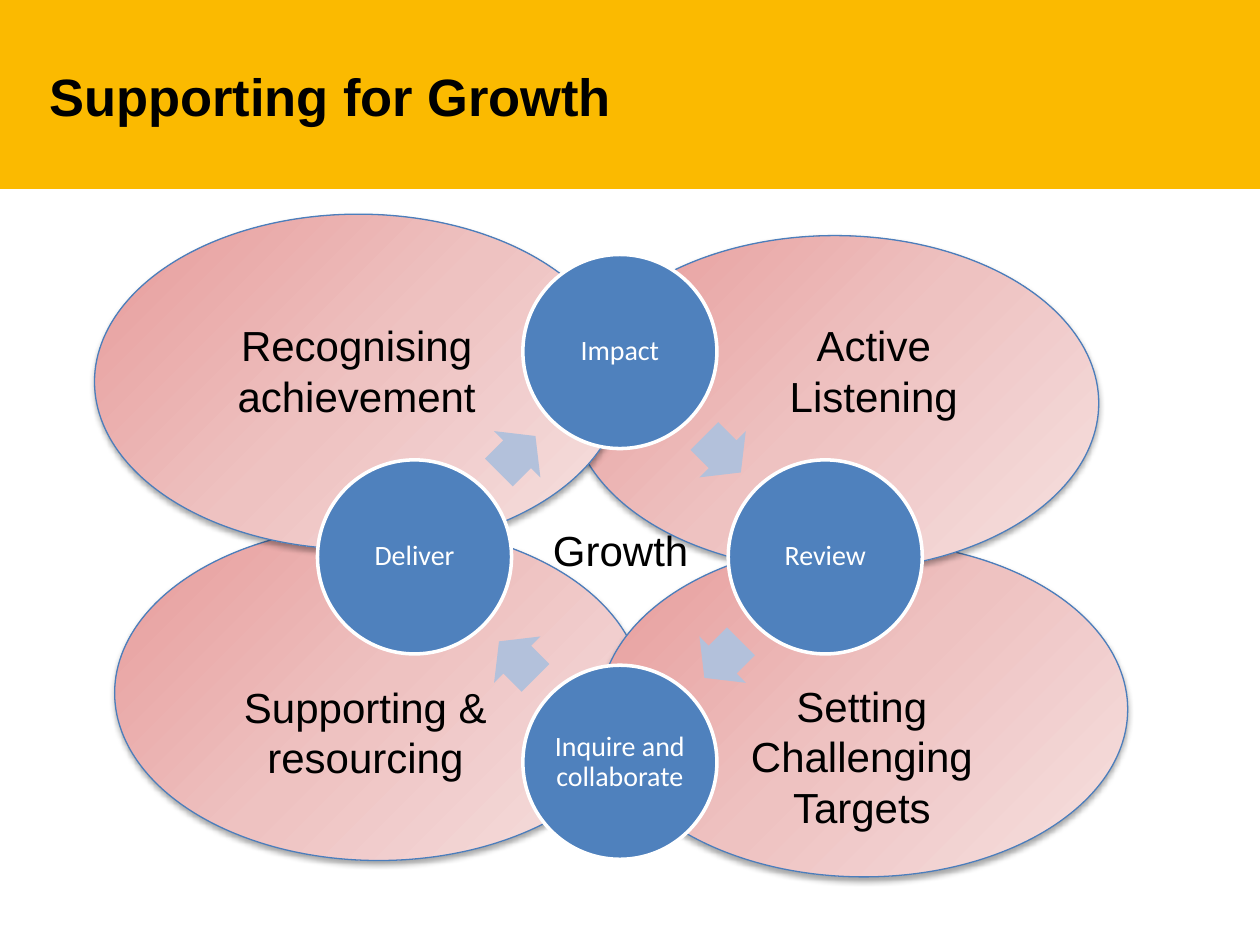
from math import cos, radians, sin

from lxml.etree import SubElement
from pptx import Presentation
from pptx.dml.color import RGBColor
from pptx.enum.shapes import MSO_SHAPE as Shape
from pptx.enum.text import MSO_ANCHOR as Anchor, PP_ALIGN as Align
from pptx.oxml import parse_xml
from pptx.oxml.ns import nsdecls, qn
from pptx.util import Inches, Pt

COLORS = {
    "banner": "FBBA00", "text": "000000", "white": "FFFFFF",
    "stage": "4F81BD", "arrow": "B3C1DB", "petal_line": "4B7EBC",
}
PETAL_STOPS = [(0, "E79A99"), (50, "EEC2C1"), (100, "F6E1E1")]

TITLE = "Supporting for Growth"
CENTRE_LABEL = ("Growth", (4.29, 4.11, 1.29, 0.5))
# Back to front: left and top of the petal, label, box of the label
PETALS = [
    ((0.91, 4.17), "Supporting & resourcing", (1.61, 5.36, 2.58, 0.91)),
    ((4.76, 4.3), "Setting Challenging Targets", (5.55, 5.35, 2.58, 1.31)),
    ((4.53, 1.87), "Active Listening", (5.87, 2.49, 2.13, 0.91)),
    ((0.75, 1.7), "Recognising achievement", (1.54, 2.49, 2.58, 0.91)),
]
STAGES = ["Impact", "Review", "Inquire and collaborate", "Deliver"]  # clockwise from top

WIDTH, HEIGHT = 10, 7.5
PETAL_SIZE = (4.19, 2.66)
CYCLE_CENTRE, CYCLE_RADIUS = (4.92, 4.42), 1.63
STAGE_SIZE, ARROW_SIZE = (1.54, 1.54), (0.41, 0.52)

deck = Presentation()
deck.slide_width, deck.slide_height = Inches(WIDTH), Inches(HEIGHT)
page = deck.slides.add_slide(deck.slide_layouts[6])


def rgb(name):
    return RGBColor.from_string(COLORS[name])


def add_shape(kind, place, fill=None, line=None, line_width=1):
    shape = page.shapes.add_shape(kind, *map(Inches, place))
    shape.shadow.inherit = False
    if fill:
        shape.fill.solid()
        shape.fill.fore_color.rgb = rgb(fill)
    if line:
        shape.line.color.rgb = rgb(line)
        shape.line.width = Pt(line_width)
    else:
        shape.line.fill.background()
    return shape


def write(shape, text, size, font="Arial", color="text", align=Align.CENTER,
          bold=False, inset=None, anchor=Anchor.TOP, wrap=True):
    frame = shape.text_frame
    frame.word_wrap, frame.vertical_anchor = wrap, anchor
    if inset is not None:
        frame.margin_left = frame.margin_right = Inches(inset)
        frame.margin_top = frame.margin_bottom = Inches(inset)
    para = frame.paragraphs[0]
    para.text, para.alignment = text, align
    para.font.name, para.font.size, para.font.bold = font, Pt(size), bold
    para.font.color.rgb = rgb(color)
    return para


def add_text(text, place, size=24, **style):
    box = page.shapes.add_textbox(*map(Inches, place))
    return write(box, text, size, **style)


def style_petal(petal):
    """Give the petal its diagonal gradient and soft shadow below."""
    stops = "".join(f'<a:gs pos="{share * 1000}"><a:srgbClr val="{color}"/></a:gs>'
                    for share, color in PETAL_STOPS)
    gradient = parse_xml(f'<a:gradFill {nsdecls("a")} rotWithShape="1"><a:gsLst>{stops}</a:gsLst>'
                         '<a:lin ang="2700000" scaled="0"/></a:gradFill>')
    properties = petal._element.spPr
    properties.find(qn("a:prstGeom")).addnext(gradient)
    shadow = SubElement(properties.find(qn("a:effectLst")), qn("a:outerShdw"),
                        blurRad=str(Pt(3.1)), dist=str(Pt(1.8)), dir="5400000", rotWithShape="0")
    color = SubElement(shadow, qn("a:srgbClr"), val="000000")
    SubElement(color, qn("a:alpha"), val="35000")


def on_cycle(angle, radius, size):
    """Place for a part centred on the cycle, angle clockwise from the top."""
    x = CYCLE_CENTRE[0] + radius * sin(radians(angle))
    y = CYCLE_CENTRE[1] - radius * cos(radians(angle))
    return x - size[0] / 2, y - size[1] / 2, *size


add_shape(Shape.RECTANGLE, (0, 0, WIDTH, HEIGHT / 5), "banner")
add_text(TITLE, (0.39, 0.13, 9.23, 1.26), 30, align=Align.LEFT, bold=True,
         inset=0, anchor=Anchor.MIDDLE)

for corner, _, _ in PETALS:
    style_petal(add_shape(Shape.OVAL, (*corner, *PETAL_SIZE), line="petal_line", line_width=0.75))
for _, label, place in PETALS:
    add_text(label, place)

step = 360 / len(STAGES)
for number, stage in enumerate(STAGES):
    angle = number * step
    circle = add_shape(Shape.OVAL, on_cycle(angle, CYCLE_RADIUS, STAGE_SIZE), "stage", "white", 2)
    para = write(circle, stage, 16, font="Calibri", color="white", inset=0.02, anchor=Anchor.MIDDLE)
    para.line_spacing = 0.9

    # Each arrow sits midway between two neighbouring circles
    halfway = angle + step / 2
    midpoint_radius = CYCLE_RADIUS * cos(radians(step / 2))
    arrow = add_shape(Shape.RIGHT_ARROW, on_cycle(halfway, midpoint_radius, ARROW_SIZE), "arrow")
    arrow.adjustments[0], arrow.adjustments[1] = 0.6, 0.5
    arrow.rotation = halfway

add_text(*CENTRE_LABEL, align=Align.LEFT, wrap=False)

deck.save("out.pptx")
